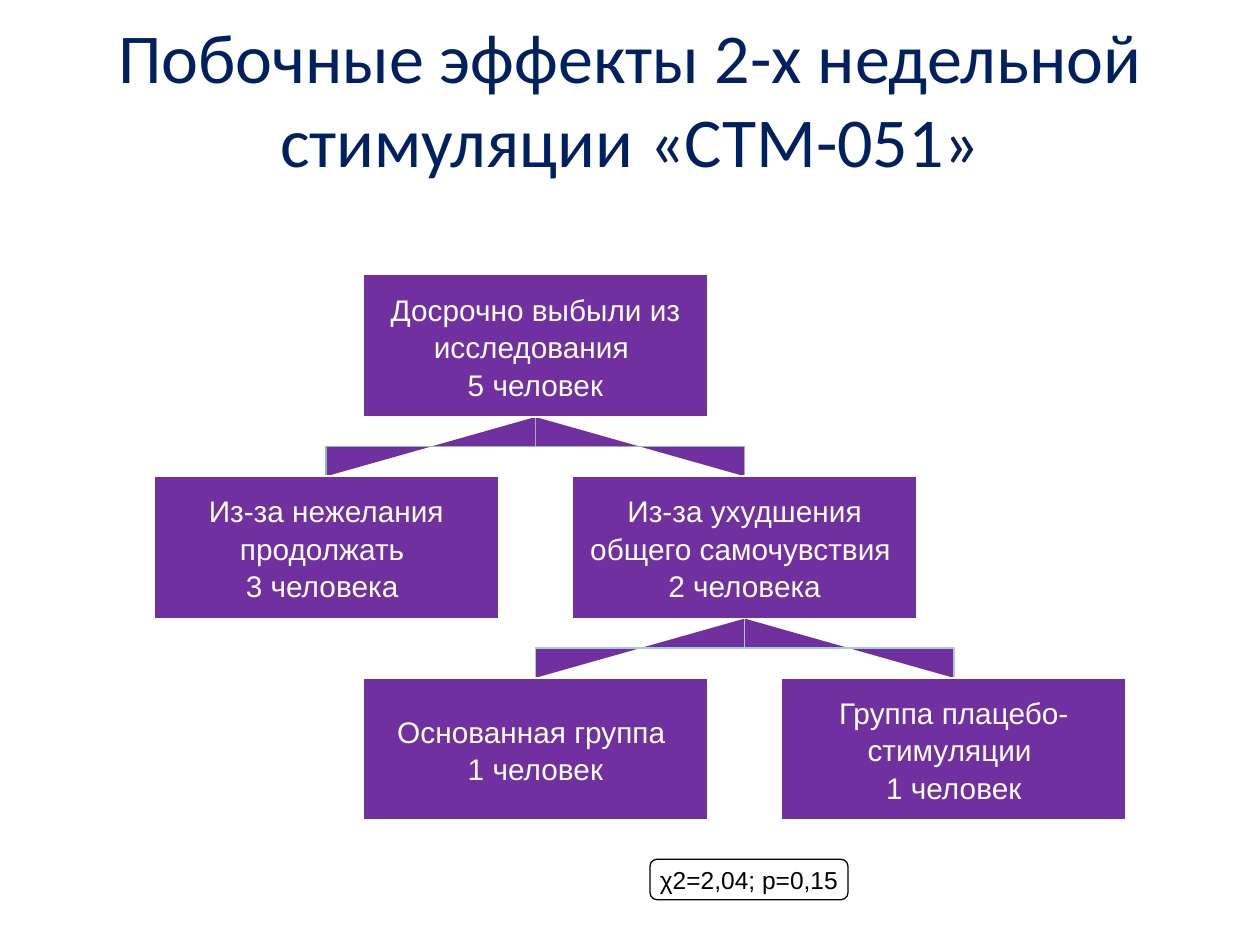
from pptx import Presentation
from pptx.dml.color import RGBColor
from pptx.enum import shapes, text
from pptx.util import Inches, Pt

TITLE = "Побочные эффекты 2-х недельной стимуляции «СТМ-051»"
STATISTIC = "χ2=2,04; p=0,15"

# Tree boxes: key -> (column, row, parent, lines)
GROUPS = {
    "dropouts": (1, 0, None, ["Досрочно выбыли из исследования ", "5 человек"]),
    "unwilling": (0, 1, "dropouts", ["Из-за нежелания продолжать ", "3 человека "]),
    "unwell": (2, 1, "dropouts", ["Из-за ухудшения общего самочувствия ", "2 человека"]),
    "main": (1, 2, "unwell", ["Основанная группа ", "1 человек"]),
    "placebo": (3, 2, "unwell", ["Группа плацебо-стимуляции ", "1 человек"]),
}

THEME = {
    "title": RGBColor(0x00, 0x20, 0x60),
    "box": RGBColor(0x70, 0x30, 0xA0),
    "white": RGBColor(0xFF, 0xFF, 0xFF),
    "black": RGBColor(0, 0, 0),
    "branches": {1: RGBColor(0x96, 0xB3, 0xB6), 2: RGBColor(0xAA, 0xCB, 0xCE)},
    "title_font": "Calibri",
    "body_font": "Arial",
    "title_size": Pt(40),
    "box_size": Pt(17),
    "statistic_size": Pt(14),
}

LEFT, TOP = Inches(1.22), Inches(2.18)
COLUMN_STEP, ROW_STEP = Inches(1.66), Inches(1.6)
BOX_W, BOX_H = Inches(2.74), Inches(1.13)


def box_corner(key):
    column, row = GROUPS[key][:2]
    return LEFT + column * COLUMN_STEP, TOP + row * ROW_STEP


def paint(shape, line_color, width, fill=None):
    shape.shadow.inherit = False
    if fill is None:
        shape.fill.background()
    else:
        shape.fill.solid()
        shape.fill.fore_color.rgb = fill
    shape.line.color.rgb = line_color
    shape.line.width = width


def write(shape, lines, font, size, color, margin=None, spacing=None):
    frame = shape.text_frame
    frame.vertical_anchor = text.MSO_ANCHOR.MIDDLE
    if margin is not None:
        frame.margin_left = frame.margin_right = margin
        frame.margin_top = frame.margin_bottom = margin
    frame.text = "\n".join(lines)
    for paragraph in frame.paragraphs:
        paragraph.alignment = text.PP_ALIGN.CENTER
        paragraph.font.name = font
        paragraph.font.size = size
        paragraph.font.color.rgb = color
        if spacing:
            paragraph.line_spacing = spacing
    return frame


def add_branch(slide, parent, child):
    """Filled elbow from the parent's bottom centre to the child's top centre."""
    parent_left, parent_top = box_corner(parent)
    child_left, end_y = box_corner(child)
    start_x, end_x = parent_left + BOX_W // 2, child_left + BOX_W // 2
    start_y = parent_top + BOX_H
    middle_y = (start_y + end_y) // 2
    builder = slide.shapes.build_freeform(start_x, start_y)
    builder.add_line_segments(
        [(start_x, middle_y), (end_x, middle_y), (end_x, end_y)], close=False)
    row = GROUPS[child][1]
    paint(builder.convert_to_shape(), THEME["branches"][row], Pt(1), THEME["box"])


def add_box(slide, key):
    box = slide.shapes.add_shape(
        shapes.MSO_SHAPE.RECTANGLE, *box_corner(key), BOX_W, BOX_H)
    paint(box, THEME["white"], Pt(1), THEME["box"])
    frame = write(box, GROUPS[key][3], THEME["body_font"], THEME["box_size"],
                  THEME["white"], Inches(0.01), 1.05)
    frame.word_wrap = True


def main():
    prs = Presentation()
    prs.slide_width, prs.slide_height = Inches(10), Inches(7.5)
    slide = prs.slides.add_slide(prs.slide_layouts[5])

    # Title
    title = slide.shapes.title
    title.left, title.top = Inches(0.5), Inches(0)
    title.width, title.height = Inches(9), Inches(1.55)
    write(title, [TITLE], THEME["title_font"], THEME["title_size"], THEME["title"])

    # Branches lie behind the boxes
    for key, (_, _, parent, _) in GROUPS.items():
        if parent:
            add_branch(slide, parent, key)
    for key in GROUPS:
        add_box(slide, key)

    # Test statistic
    statistic = slide.shapes.add_shape(
        shapes.MSO_SHAPE.ROUNDED_RECTANGLE,
        Inches(5.16), Inches(6.82), Inches(1.57), Inches(0.32))
    paint(statistic, THEME["black"], Pt(0.75))
    frame = write(statistic, [STATISTIC], THEME["body_font"],
                  THEME["statistic_size"], THEME["black"])
    frame.word_wrap = False

    prs.save("out.pptx")


if __name__ == "__main__":
    main()
